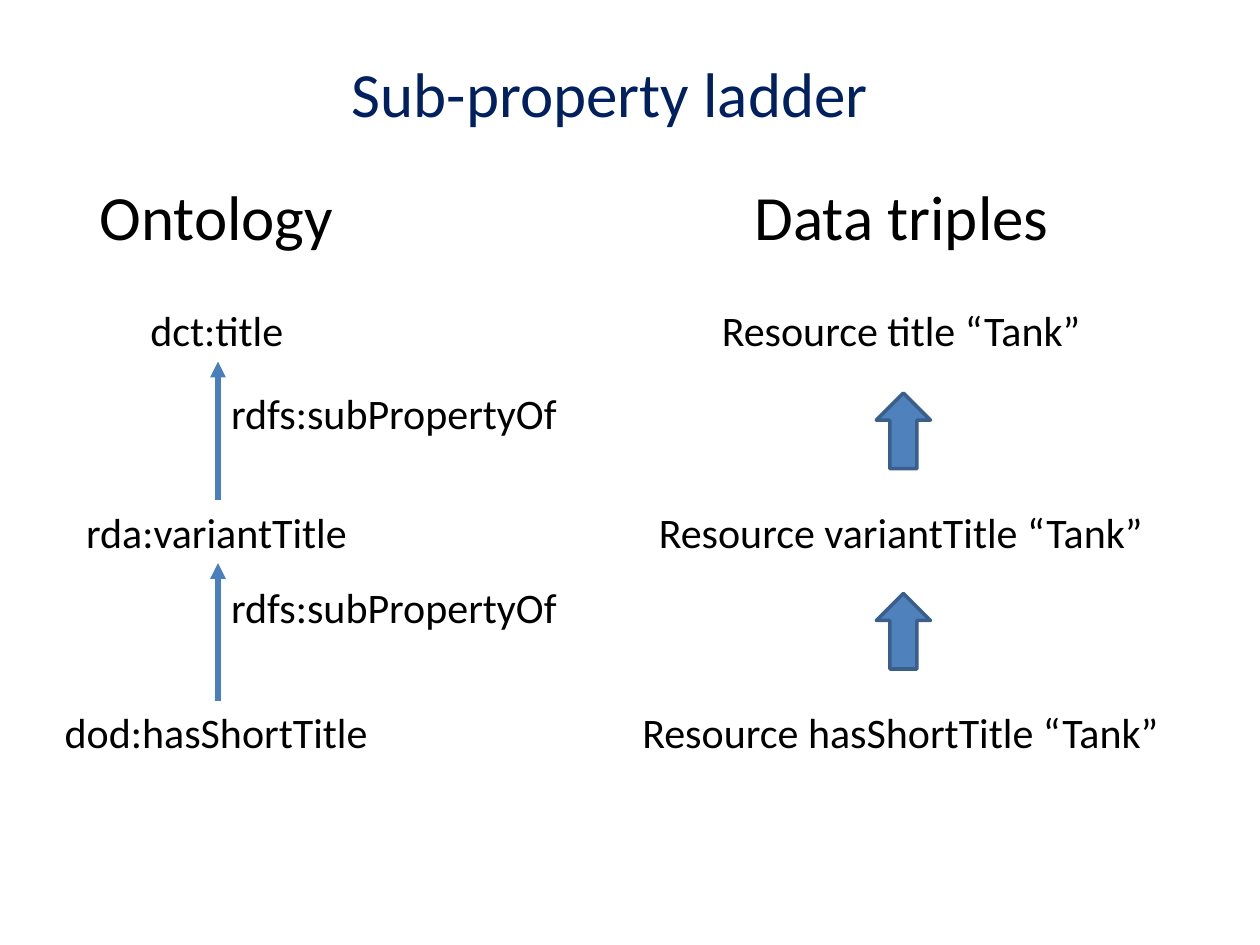
from dataclasses import dataclass

from lxml.etree import SubElement
from pptx import Presentation
from pptx.dml.color import RGBColor
from pptx.enum.shapes import MSO_CONNECTOR, MSO_SHAPE
from pptx.enum.text import MSO_AUTO_SIZE, PP_ALIGN
from pptx.oxml.ns import qn
from pptx.shapes.autoshape import Shape
from pptx.shapes.shapetree import SlideShapes
from pptx.util import Emu, Pt


@dataclass(frozen=True)
class Theme:
    font: str = "Calibri"
    title: RGBColor = RGBColor(0x00, 0x20, 0x60)
    text: RGBColor = RGBColor(0x00, 0x00, 0x00)
    link: RGBColor = RGBColor(0x4B, 0x7E, 0xBC)
    arrow_fill: RGBColor = RGBColor(0x4F, 0x81, 0xBD)
    arrow_line: RGBColor = RGBColor(0x3A, 0x5F, 0x8C)
    heading_size: int = 36
    body_size: int = 24
    link_width: int = 3
    arrow_width: int = 2


@dataclass(frozen=True)
class Label:
    text: str
    center: int
    top: int
    width: int
    heading: bool = False


@dataclass(frozen=True)
class Rung:
    top: int
    term: str
    term_width: int
    triple: str
    triple_width: int


THEME = Theme()
PX_PER_INCH = 100
EMU_PER_PX = 914400 // PX_PER_INCH
ONTOLOGY_CENTER, DATA_CENTER = 173, 717
HEADING_HEIGHT, BODY_HEIGHT = 71, 50
ARROW_WIDTH, ARROW_HEIGHT = 43, 60

TITLE = Label("Sub-property ladder", 484, 38, 488, heading=True)
HEADINGS = [
    Label("Ontology", ONTOLOGY_CENTER, 136, 208, heading=True),
    Label("Data triples", DATA_CENTER, 136, 256, heading=True),
]
RUNGS = [
    Rung(237, "dct:title", 127, "Resource title “Tank”", 308),
    Rung(397, "rda:variantTitle", 229, "Resource variantTitle “Tank”", 408),
    Rung(556, "dod:hasShortTitle", 263, "Resource hasShortTitle “Tank”", 434),
]
RELATIONS = [Label("rdfs:subPropertyOf", 314, top, 281) for top in (303, 457)]
ARROW_TOPS = (312, 471)


def px(length: float) -> Emu:
    return Emu(round(length * EMU_PER_PX))


def set_format(target: object, values: dict[str, object]) -> None:
    for name, value in values.items():
        setattr(target, name, value)


def add_label(shapes: SlideShapes, label: Label, color: RGBColor = THEME.text,
              wrap: bool = False) -> Shape:
    height = HEADING_HEIGHT if label.heading else BODY_HEIGHT
    box = shapes.add_textbox(px(label.center - label.width / 2), px(label.top),
                             px(label.width), px(height))
    set_format(box.text_frame, {"word_wrap": wrap,
                                "auto_size": MSO_AUTO_SIZE.SHAPE_TO_FIT_TEXT})
    para = box.text_frame.paragraphs[0]
    para.alignment = PP_ALIGN.CENTER if wrap else PP_ALIGN.LEFT
    span = para.add_run()
    span.text = label.text
    size = THEME.heading_size if label.heading else THEME.body_size
    set_format(span.font, {"name": THEME.font, "size": Pt(size)})
    span.font.color.rgb = color
    return box


def add_link(shapes: SlideShapes, lower: Shape, upper: Shape) -> None:
    """Point an arrow from the top of the lower term to the foot of the upper."""
    link = shapes.add_connector(MSO_CONNECTOR.STRAIGHT, 0, 0, 0, 0)
    link.begin_connect(lower, 0)
    link.end_connect(upper, 2)
    link.line.width = Pt(THEME.link_width)
    link.line.color.rgb = THEME.link
    SubElement(link.line._get_or_add_ln(), qn("a:tailEnd"), type="triangle")
    SubElement(link._element.spPr, qn("a:effectLst"))


def add_up_arrow(shapes: SlideShapes, top: int) -> None:
    arrow = shapes.add_shape(MSO_SHAPE.UP_ARROW, px(DATA_CENTER - ARROW_WIDTH / 2),
                             px(top), px(ARROW_WIDTH), px(ARROW_HEIGHT))
    arrow.shadow.inherit = False
    arrow.fill.solid()
    arrow.fill.fore_color.rgb = THEME.arrow_fill
    arrow.line.width = Pt(THEME.arrow_width)
    arrow.line.color.rgb = THEME.arrow_line


def main() -> None:
    deck = Presentation()
    set_format(deck, {"slide_width": px(1000), "slide_height": px(750)})
    page = deck.slides.add_slide(deck.slide_layouts[6])
    shapes = page.shapes

    add_label(shapes, TITLE, THEME.title, wrap=True)
    for label in HEADINGS + RELATIONS:
        add_label(shapes, label)

    terms = []
    for rung in RUNGS:
        terms.append(add_label(
            shapes, Label(rung.term, ONTOLOGY_CENTER, rung.top, rung.term_width)))
        add_label(shapes, Label(rung.triple, DATA_CENTER, rung.top, rung.triple_width))

    for upper, lower in zip(terms, terms[1:]):
        add_link(shapes, lower, upper)
    for top in ARROW_TOPS:
        add_up_arrow(shapes, top)

    deck.save("out.pptx")


if __name__ == "__main__":
    main()
